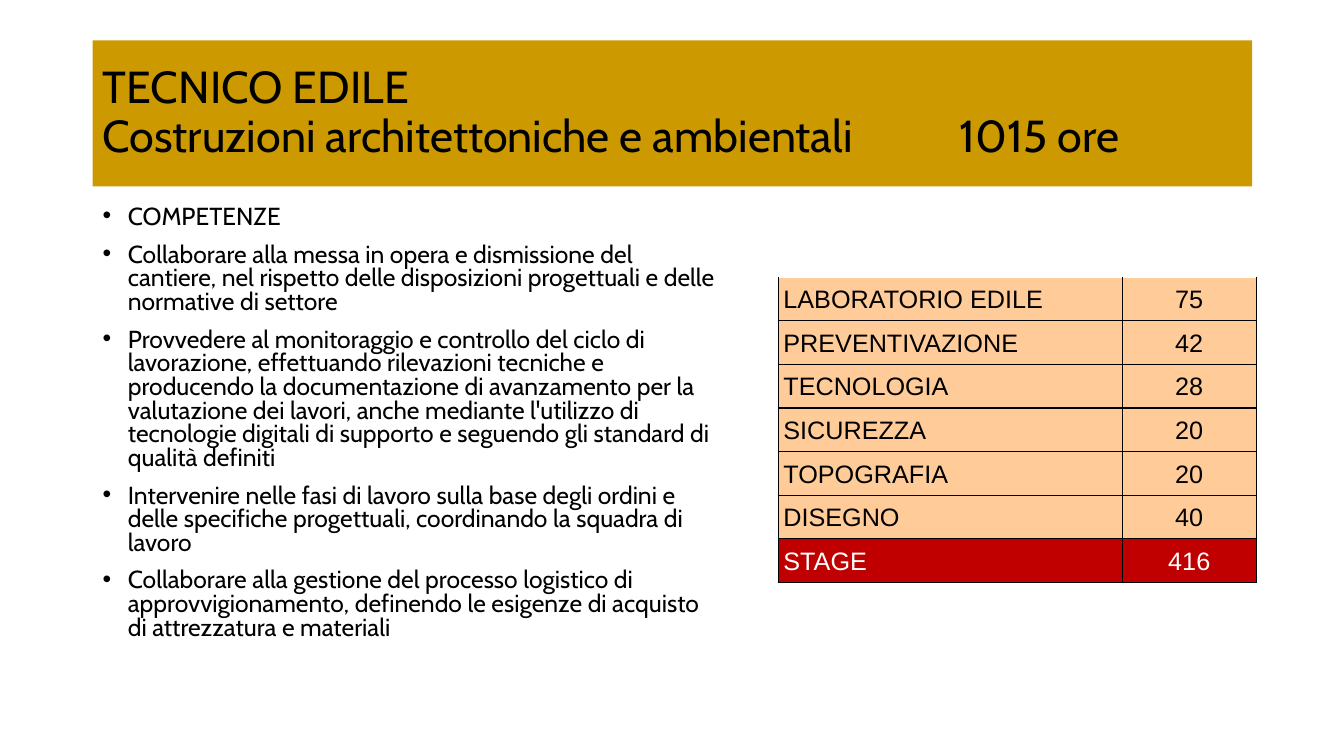
from lxml import etree
from pptx import Presentation
from pptx.dml.color import RGBColor
from pptx.enum.shapes import MSO_SHAPE
from pptx.enum.text import MSO_ANCHOR, PP_ALIGN
from pptx.oxml.ns import qn
from pptx.util import Emu, Pt

LEFT, CENTER = PP_ALIGN.LEFT, PP_ALIGN.CENTER
MIDDLE = MSO_ANCHOR.MIDDLE
RECTANGLE = MSO_SHAPE.RECTANGLE

GOLD = RGBColor(0xCC, 0x99, 0x00)
PEACH = RGBColor(0xFF, 0xCC, 0x99)
RED = RGBColor(0xC0, 0x00, 0x00)
BLACK = RGBColor(0x00, 0x00, 0x00)
WHITE = RGBColor(0xFF, 0xFF, 0xFF)

PX = 9144

HEADING = "TECNICO EDILE\nCostruzioni architettoniche e ambientali \t\t1015 ore"
SKILLS = [
    "COMPETENZE",
    "Collaborare alla messa in opera e dismissione del cantiere, nel rispetto "
    "delle disposizioni progettuali e delle normative di settore",
    "Provvedere al monitoraggio e controllo del ciclo di lavorazione, effettuando "
    "rilevazioni tecniche e producendo la documentazione di avanzamento per la "
    "valutazione dei lavori, anche mediante l'utilizzo di tecnologie digitali di "
    "supporto e seguendo gli standard di qualità definiti",
    "Intervenire nelle fasi di lavoro sulla base degli ordini e delle specifiche "
    "progettuali, coordinando la squadra di lavoro",
    "Collaborare alla gestione del processo logistico di approvvigionamento, "
    "definendo le esigenze di acquisto di attrezzatura e materiali",
]
HOURS = [
    ("LABORATORIO EDILE", 75),
    ("PREVENTIVAZIONE", 42),
    ("TECNOLOGIA", 28),
    ("SICUREZZA", 20),
    ("TOPOGRAFIA", 20),
    ("DISEGNO", 40),
    ("STAGE", 416),
]


def px(*lengths):
    return [Emu(length * PX) for length in lengths]


class CourseSlide:
    text_font = "Cabin"
    table_font = "Arial"

    def __init__(self, deck):
        self.slide = deck.slides.add_slide(deck.slide_layouts[6])

    def set_text(self, paragraph, text, size, font, color, spacing, align=LEFT):
        paragraph.text = text
        paragraph.alignment = align
        paragraph.line_spacing = spacing
        paragraph.font.size = Pt(size)
        paragraph.font.name = font
        paragraph.font.color.rgb = color

    def banner(self, text, *box):
        banner = self.slide.shapes.add_shape(RECTANGLE, *px(*box))
        banner.shadow.inherit = False
        banner.fill.solid()
        banner.fill.fore_color.rgb = GOLD
        banner.line.fill.background()
        frame = banner.text_frame
        frame.word_wrap = True
        frame.vertical_anchor = MIDDLE
        self.set_text(frame.paragraphs[0], text, 32, self.text_font, BLACK, 0.9)

    def bullets(self, items, *box):
        frame = self.slide.shapes.add_textbox(*px(*box)).text_frame
        frame.word_wrap = True
        for index, item in enumerate(items):
            paragraph = frame.add_paragraph() if index else frame.paragraphs[0]
            self.set_text(paragraph, item, 17.6, self.text_font, BLACK, 0.8)
            paragraph.space_before = Pt(10)
            properties = paragraph._p.get_or_add_pPr()
            properties.set("marL", str(25 * PX))
            properties.set("indent", str(-25 * PX))
            bullet_font = etree.Element(qn("a:buFont"), typeface="Arial")
            bullet = etree.Element(qn("a:buChar"), char="•")
            spacing = properties.find(qn("a:spcBef"))
            spacing.addnext(bullet_font)
            bullet_font.addnext(bullet)

    def borders(self, cell, sides):
        properties = cell._tc.get_or_add_tcPr()
        for position, side in enumerate(sides):
            line = etree.Element(qn(f"a:ln{side}"), w=str(Pt(1)))
            fill = etree.SubElement(line, qn("a:solidFill"))
            etree.SubElement(fill, qn("a:srgbClr"), val=str(BLACK))
            properties.insert(position, line)

    def hours_table(self, rows, widths, left, top, height):
        box = px(left, top, sum(widths), height)
        table = self.slide.shapes.add_table(len(rows), len(widths), *box).table
        table.first_row = table.horz_banding = False
        for column, width in zip(table.columns, px(*widths)):
            column.width = width
        for row, values in enumerate(rows):
            is_stage = row == len(rows) - 1
            for column, align in enumerate((LEFT, CENTER)):
                cell = table.cell(row, column)
                cell.fill.solid()
                cell.fill.fore_color.rgb = RED if is_stage else PEACH
                cell.vertical_anchor = MIDDLE
                cell.margin_left, cell.margin_right = px(5, 5)
                cell.margin_top = cell.margin_bottom = 0
                paragraph = cell.text_frame.paragraphs[0]
                color = WHITE if is_stage else BLACK
                self.set_text(paragraph, str(values[column]), 18, self.table_font, color, 1.07, align)
                paragraph.space_after = Pt(8)
                self.borders(cell, "LRTB" if row else "LRB")


def main():
    deck = Presentation()
    deck.slide_width, deck.slide_height = px(1333, 750)
    course = CourseSlide(deck)
    course.banner(HEADING, 92, 40, 1150, 145)
    course.bullets(SKILLS, 92, 200, 634, 476)
    course.hours_table(HOURS, (341, 133), 772, 275, 303)
    deck.save("out.pptx")


if __name__ == "__main__":
    main()
